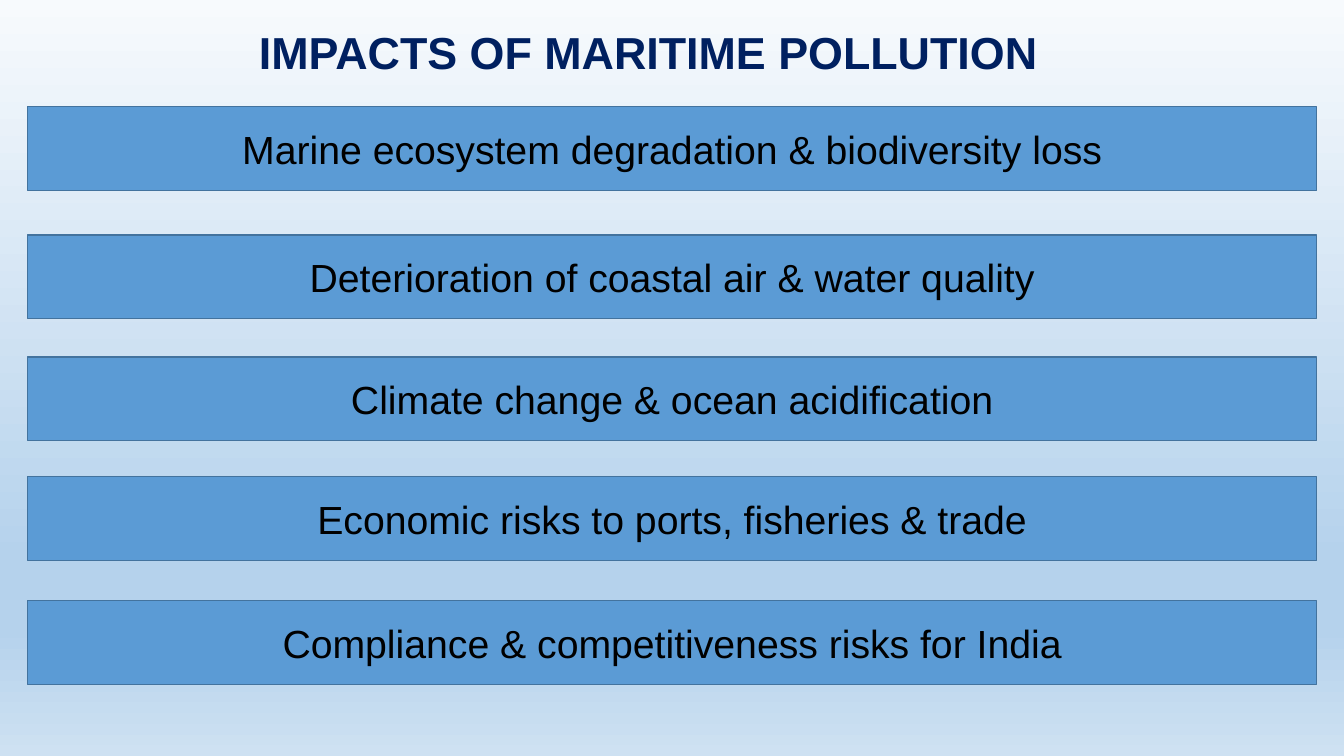
from copy import deepcopy

from pptx import Presentation
from pptx.dml.color import RGBColor
from pptx.enum.shapes import MSO_SHAPE as Shape
from pptx.enum.text import MSO_ANCHOR as Anchor, MSO_AUTO_SIZE as AutoSize, PP_ALIGN as Align
from pptx.oxml.ns import qn
from pptx.util import Inches, Pt

COLORS = {
    "title": "002060",
    "text": "000000",
    "bar": "5B9BD5",
    "bar_edge": "43739E",
    "sky": "F7FAFD",
    "sea": "B5D2EC",
    "shore": "CEE1F2",
}
BACKGROUND = [(0, "sky"), (0.74, "sea"), (0.83, "sea"), (1, "shore")]
IMPACTS = [
    (1.06, "Marine ecosystem degradation & biodiversity loss"),
    (2.33, "Deterioration of coastal air & water quality"),
    (3.54, "Climate change & ocean acidification"),
    (4.73, "Economic risks to ports, fisheries & trade"),
    (5.96, "Compliance & competitiveness risks for India"),
]


def color(name):
    return RGBColor.from_string(COLORS[name])


class SlideBuilder:
    font_name = "Arial"

    def __init__(self, page):
        self.page = page

    def background(self, stops):
        """Fill the page with a top-to-bottom gradient."""
        fill = self.page.background.fill
        fill.gradient()
        fill.gradient_angle = 270
        stop_list = self.page.element.find(".//" + qn("a:gsLst"))
        while len(stop_list) < len(stops):
            stop_list.append(deepcopy(stop_list[0]))
        for stop, (position, name) in zip(fill.gradient_stops, stops):
            stop.position = position
            stop.color.rgb = color(name)

    def set_text(self, frame, text, size, color_name, align, bold=False):
        frame.word_wrap = True
        para = frame.paragraphs[0]
        para.text = text
        para.alignment = align
        font = para.font
        font.name, font.size, font.bold = self.font_name, Pt(size), bold
        font.color.rgb = color(color_name)

    def title(self, text, left, top, width, height):
        box = self.page.shapes.add_textbox(*map(Inches, (left, top, width, height)))
        self.set_text(box.text_frame, text, 32, "title", Align.LEFT, bold=True)
        box.text_frame.auto_size = AutoSize.SHAPE_TO_FIT_TEXT

    def bar(self, text, left, top, width, height):
        box = self.page.shapes.add_shape(
            Shape.RECTANGLE, *map(Inches, (left, top, width, height)))
        box.shadow.inherit = False
        box.fill.solid()
        box.fill.fore_color.rgb = color("bar")
        box.line.color.rgb = color("bar_edge")
        box.line.width = Pt(1)
        box.text_frame.vertical_anchor = Anchor.MIDDLE
        self.set_text(box.text_frame, text, 28, "text", Align.CENTER)


def main():
    deck = Presentation()
    deck.slide_width, deck.slide_height = Inches(13.33), Inches(7.5)
    builder = SlideBuilder(deck.slides.add_slide(deck.slide_layouts[6]))
    builder.background(BACKGROUND)
    builder.title("IMPACTS OF MARITIME POLLUTION", 2.47, 0.2, 8.64, 0.64)
    for top, impact in IMPACTS:
        builder.bar(impact, 0.27, top, 12.79, 0.83)
    deck.save("out.pptx")


if __name__ == "__main__":
    main()
